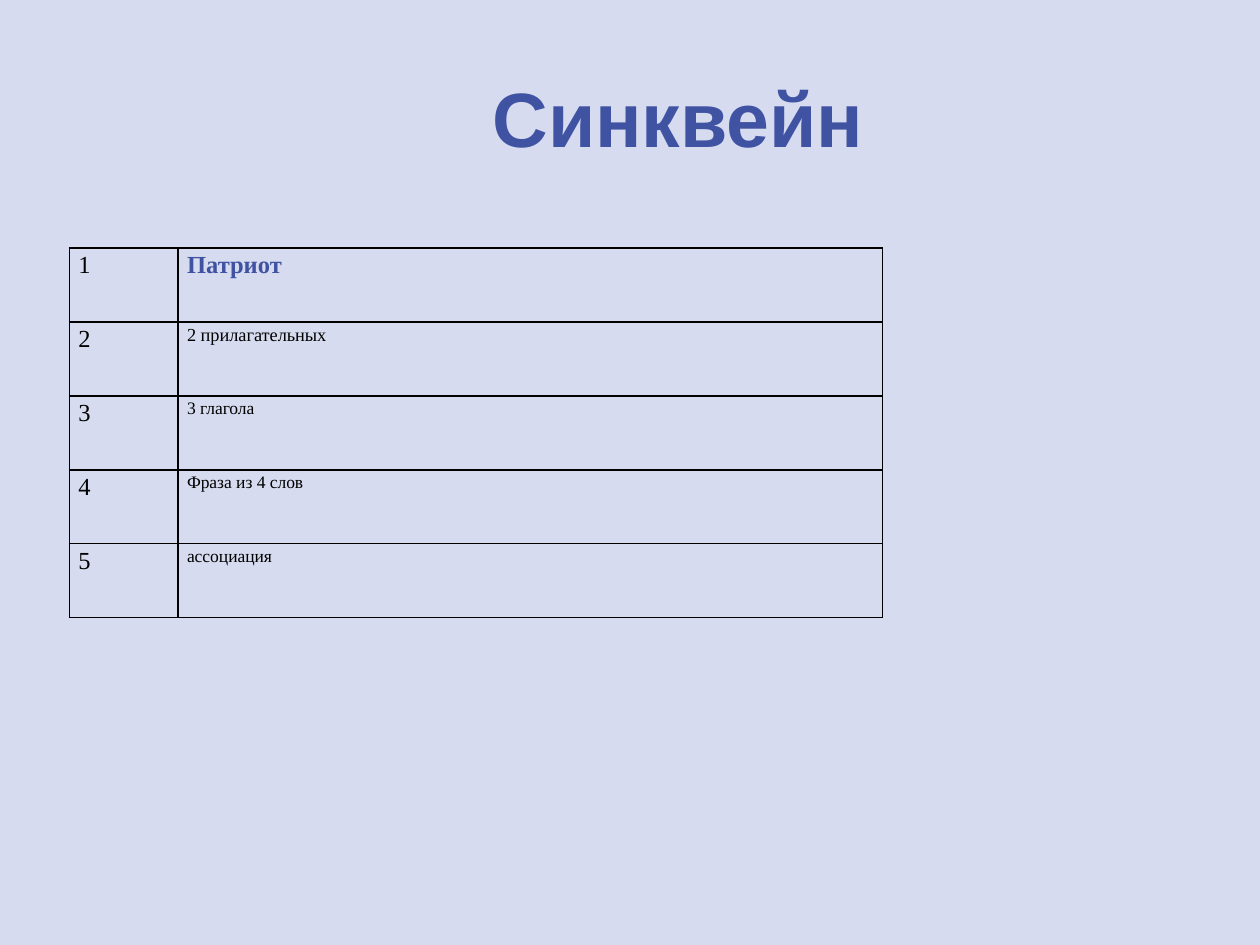
"""Build the cinquain slide: a title above a five-line table."""
from lxml import etree
from pptx import Presentation
from pptx import util as u
from pptx.dml.color import RGBColor
from pptx.enum import text
from pptx.oxml import ns

BACKGROUND = RGBColor(0xD6, 0xDB, 0xEF)
BLUE = RGBColor(0x40, 0x53, 0xA3)
BLACK = RGBColor(0, 0, 0)
HEADING_FONT = "Arial"
BODY_FONT = "Times New Roman"


def write(tf, words, size, font=BODY_FONT, color=BLACK, bold=False,
          align=None, spacing=None):
    p = tf.paragraphs[0]
    p.alignment = align
    p.line_spacing = spacing
    r = p.add_run()
    r.text = words
    r.font.name = font
    r.font.size = u.Pt(size)
    r.font.bold = bold
    r.font.color.rgb = color


class Deck:
    def __init__(self):
        self.prs = Presentation()
        self.prs.slide_width = u.Cm(25.4)
        self.prs.slide_height = u.Cm(19.05)
        self.s = self.prs.slides.add_slide(self.prs.slide_layouts[5])
        fill = self.s.background.fill
        fill.solid()
        fill.fore_color.rgb = BACKGROUND

    def title(self, words, left, top, width, height):
        sp = self.s.shapes.title
        sp.left, sp.top = u.Cm(left), u.Cm(top)
        sp.width, sp.height = u.Cm(width), u.Cm(height)
        tf = sp.text_frame
        tf.vertical_anchor = text.MSO_ANCHOR.MIDDLE
        write(tf, words, 44, font=HEADING_FONT, color=BLUE, bold=True,
              align=text.PP_ALIGN.CENTER)

    def border(self, cell):
        tc_pr = cell._tc.get_or_add_tcPr()
        for i, side in enumerate(("lnL", "lnR", "lnT", "lnB")):
            ln = etree.Element(ns.qn(f"a:{side}"), w=str(u.Pt(1)))
            fill = etree.SubElement(ln, ns.qn("a:solidFill"))
            etree.SubElement(fill, ns.qn("a:srgbClr"), val=str(BLACK))
            tc_pr.insert(i, ln)

    def table(self, lines, left, top, widths, row_height):
        frame = self.s.shapes.add_table(
            len(lines), len(widths), u.Cm(left), u.Cm(top),
            u.Cm(sum(widths)), u.Cm(row_height * len(lines)))
        tbl = frame.table
        tbl.first_row = tbl.horz_banding = False
        for col, width in zip(tbl.columns, widths):
            col.width = u.Cm(width)
        for number, (words, style) in enumerate(lines, 1):
            row = tbl.rows[number - 1]
            row.height = u.Cm(row_height)
            contents = ((str(number), {"size": 14}), (words, style))
            for cell, (content, look) in zip(row.cells, contents):
                cell.margin_left = cell.margin_right = u.Cm(0.18)
                cell.margin_top = cell.margin_bottom = 0
                cell.fill.background()
                self.border(cell)
                write(cell.text_frame, content, spacing=1.15, **look)


def main():
    deck = Deck()
    deck.title("Синквейн", 2.24, 0.76, 22.86, 3.18)
    lines = [
        ("Патриот", {"size": 14, "color": BLUE, "bold": True}),
        ("2 прилагательных", {"size": 10.5}),
        ("3 глагола", {"size": 10}),
        ("Фраза из 4 слов", {"size": 10}),
        ("ассоциация", {"size": 10}),
    ]
    deck.table(lines, 1.4, 5, (2.19, 14.2), 1.49)
    deck.prs.save("out.pptx")


if __name__ == "__main__":
    main()
